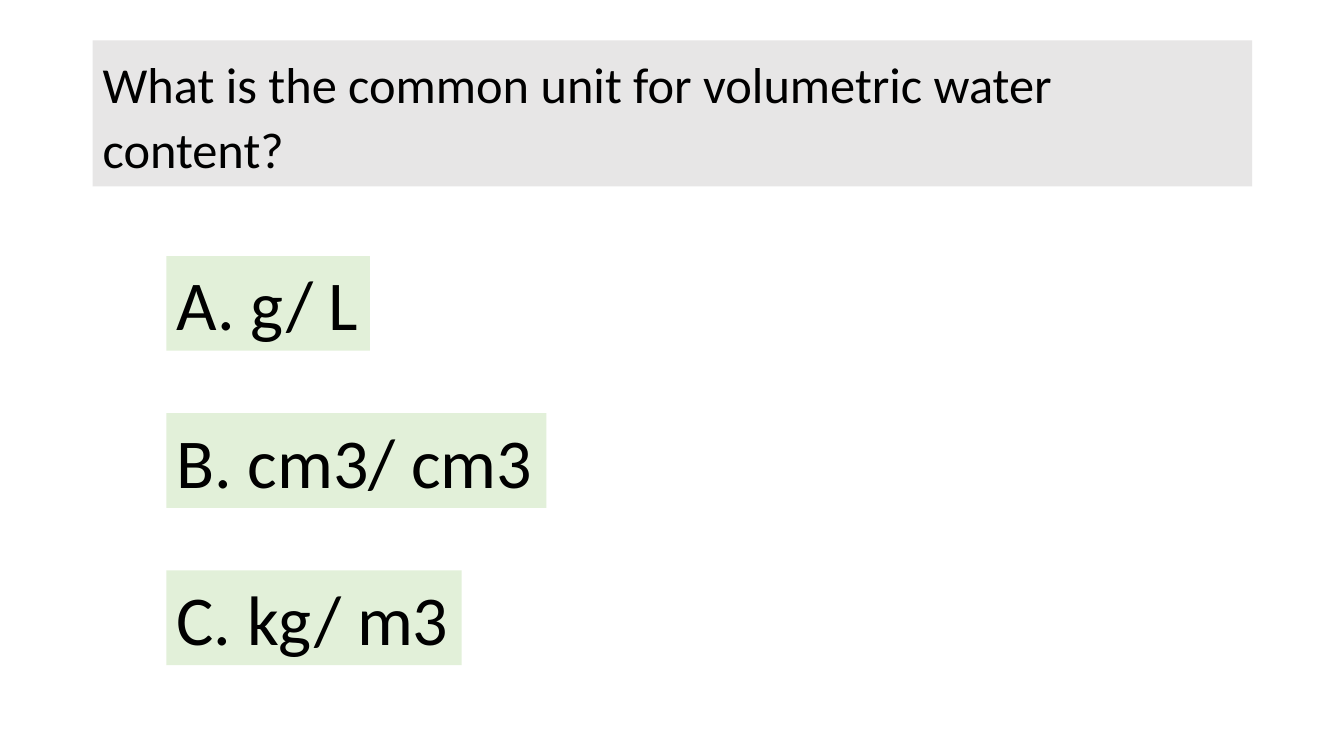
from pptx import Presentation
from pptx.dml.color import RGBColor
from pptx.enum import text
from pptx.util import Inches, Pt

COLORS = {"question": "E7E6E6", "answer": "E2F0D9", "text": "000000"}
FONT = "Calibri"
ANSWERS = [("A. g/ L", 2.02), ("B. cm3/ cm3", 3.77), ("C. kg/ m3", 2.93)]
ANSWER_LEFT, ANSWER_TOP, ANSWER_STEP = 1.65, 2.54, 1.56


def add_filled_text(slide, words, left, top, width, height, fill, size):
    """Add a text box with a solid fill and return it."""
    sp = slide.shapes.add_textbox(
        Inches(left), Inches(top), Inches(width), Inches(height))
    sp.fill.solid()
    sp.fill.fore_color.rgb = RGBColor.from_string(COLORS[fill])
    p = sp.text_frame.paragraphs[0]
    p.text = words
    p.font.name = FONT
    p.font.size = Pt(size)
    p.font.color.rgb = RGBColor.from_string(COLORS["text"])
    return sp


def add_question(slide, words):
    sp = add_filled_text(slide, words, 0.92, 0.4, 11.5, 1.45, "question", 36)
    tf = sp.text_frame
    tf.word_wrap = True
    tf.vertical_anchor = text.MSO_ANCHOR.MIDDLE
    p = tf.paragraphs[0]
    p.line_spacing = 1.07
    p.space_after = Pt(8)


def add_answer(slide, words, top, width):
    sp = add_filled_text(
        slide, words, ANSWER_LEFT, top, width, 0.94, "answer", 50)
    tf = sp.text_frame
    tf.word_wrap = False
    tf.auto_size = text.MSO_AUTO_SIZE.SHAPE_TO_FIT_TEXT


def main():
    prs = Presentation()
    prs.slide_width, prs.slide_height = Inches(13.33), Inches(7.5)
    slide = prs.slides.add_slide(prs.slide_layouts[6])

    # Question banner
    add_question(slide, "What is the common unit for volumetric water content?")

    # Answer choices, evenly spaced down the slide
    for i, (words, width) in enumerate(ANSWERS):
        add_answer(slide, words, ANSWER_TOP + i * ANSWER_STEP, width)

    prs.save("out.pptx")


if __name__ == "__main__":
    main()
